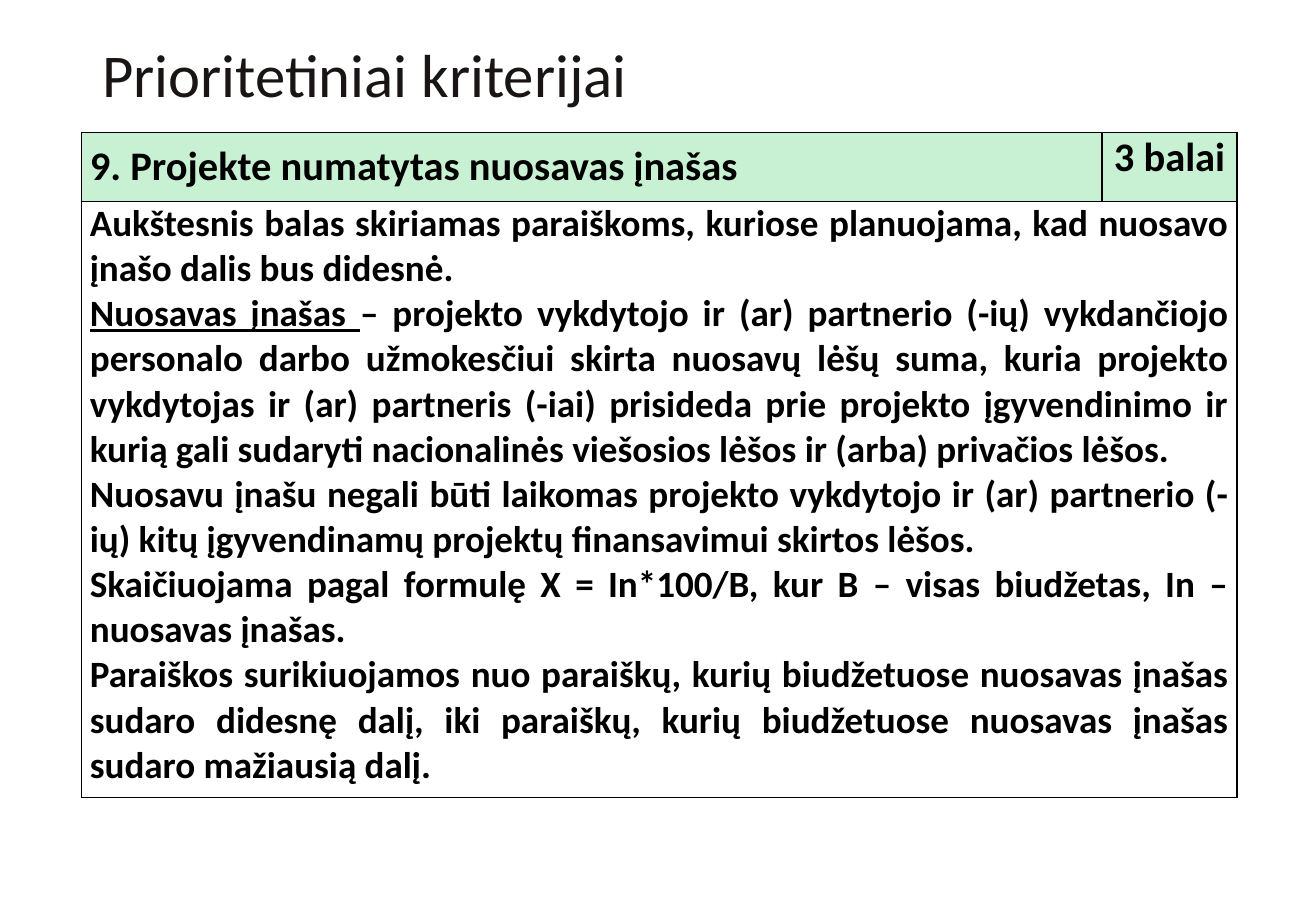
from lxml import etree
from pptx import Presentation
from pptx.dml.color import RGBColor
from pptx.enum.text import MSO_ANCHOR, PP_ALIGN
from pptx.oxml.ns import qn
from pptx.util import Inches, Pt

MIDDLE, TOP = MSO_ANCHOR.MIDDLE, MSO_ANCHOR.TOP
LEFT, CENTER, JUSTIFY = PP_ALIGN.LEFT, PP_ALIGN.CENTER, PP_ALIGN.JUSTIFY

BLACK = RGBColor(0x00, 0x00, 0x00)
TITLE_INK = RGBColor(0x19, 0x15, 0x14)
MINT = RGBColor(0xC7, 0xF1, 0xD2)
WHITE = RGBColor(0xFF, 0xFF, 0xFF)

# Each paragraph is a list of (text, underlined) runs.
CRITERION = [[("9. Projekte numatytas nuosavas įnašas", False)]]
SCORE = [[("3 balai", False)]]
DETAILS = [
    [("Aukštesnis balas skiriamas paraiškoms, kuriose planuojama, kad nuosavo "
      "įnašo dalis bus didesnė. ", False)],
    [("Nuosavas įnašas ", True),
     ("– projekto vykdytojo ir (ar) partnerio (-ių) vykdančiojo personalo darbo "
      "užmokesčiui skirta nuosavų lėšų suma, kuria projekto vykdytojas ir (ar) "
      "partneris (-iai) prisideda prie projekto įgyvendinimo ir kurią gali sudaryti "
      "nacionalinės viešosios lėšos ir (arba) privačios lėšos. ", False)],
    [("Nuosavu įnašu negali būti laikomas projekto vykdytojo ir (ar) partnerio (-ių) "
      "kitų įgyvendinamų projektų finansavimui skirtos lėšos.", False)],
    [("Skaičiuojama pagal formulę X = In*100/B, kur B – visas biudžetas, "
      "In – nuosavas įnašas.", False)],
    [("Paraiškos surikiuojamos nuo paraiškų, kurių biudžetuose nuosavas įnašas sudaro "
      "didesnę dalį, iki paraiškų, kurių biudžetuose nuosavas įnašas sudaro mažiausią "
      "dalį.", False)],
]


class SlideBuilder:
    font = "Calibri"

    def __init__(self, prs):
        self.slide = prs.slides.add_slide(prs.slide_layouts[5])
        self.slide.background.fill.solid()
        self.slide.background.fill.fore_color.rgb = WHITE

    def run(self, p, text, size, color, bold=False, underline=False):
        r = p.add_run()
        r.text = text
        r.font.name, r.font.size = self.font, Pt(size)
        r.font.bold, r.font.underline = bold, underline
        r.font.color.rgb = color

    def title(self, text, left, top, width, height):
        sp = self.slide.shapes.title
        sp.left, sp.top = Inches(left), Inches(top)
        sp.width, sp.height = Inches(width), Inches(height)
        tf = sp.text_frame
        tf.word_wrap = True
        tf.vertical_anchor = MIDDLE
        p = tf.paragraphs[0]
        p.alignment, p.line_spacing = LEFT, 0.9
        self.run(p, text, 36, TITLE_INK)

    def table(self, left, top, col_widths, row_heights):
        frame = self.slide.shapes.add_table(
            len(row_heights), len(col_widths), Inches(left), Inches(top),
            Inches(sum(col_widths)), Inches(sum(row_heights)))
        table = frame.table
        table.first_row = table.horz_banding = False
        for col, width in zip(table.columns, col_widths):
            col.width = Inches(width)
        for row, height in zip(table.rows, row_heights):
            row.height = Inches(height)
        for cell in table.iter_cells():
            self.borders(cell)
        return table

    def borders(self, cell):
        tc_pr = cell._tc.get_or_add_tcPr()
        for side in ("lnL", "lnR", "lnT", "lnB"):
            ln = etree.SubElement(tc_pr, qn(f"a:{side}"), w=str(Pt(1)))
            fill = etree.SubElement(ln, qn("a:solidFill"))
            etree.SubElement(fill, qn("a:srgbClr"), val=str(BLACK))

    def cell(self, cell, paragraphs, size, fill, anchor, align, pad, spacing=None):
        """Fill a cell; pad is its top and bottom margin in inches."""
        cell.fill.solid()
        cell.fill.fore_color.rgb = fill
        cell.vertical_anchor = anchor
        cell.margin_left = cell.margin_right = Inches(0.07)
        cell.margin_top = cell.margin_bottom = Inches(pad)
        tf = cell.text_frame
        for i, runs in enumerate(paragraphs):
            p = tf.add_paragraph() if i else tf.paragraphs[0]
            p.alignment = align
            if spacing:
                p.line_spacing = Pt(spacing)
            for text, underline in runs:
                self.run(p, text, size, BLACK, bold=True, underline=underline)


def main():
    prs = Presentation()
    prs.slide_width, prs.slide_height = Inches(10.83), Inches(7.5)
    s = SlideBuilder(prs)
    s.title("Prioritetiniai kriterijai", 0.74, 0.35, 9.34, 0.59)

    table = s.table(0.67, 1.09, [8.4, 1.11], [0.56, 4.91])
    table.cell(1, 0).merge(table.cell(1, 1))
    s.cell(table.cell(0, 0), CRITERION, 24, MINT, MIDDLE, LEFT, 0.08)
    s.cell(table.cell(0, 1), SCORE, 24, MINT, MIDDLE, CENTER, 0.04, spacing=18)
    s.cell(table.cell(1, 0), DETAILS, 22, WHITE, TOP, JUSTIFY, 0)
    prs.save("out.pptx")


if __name__ == "__main__":
    main()
